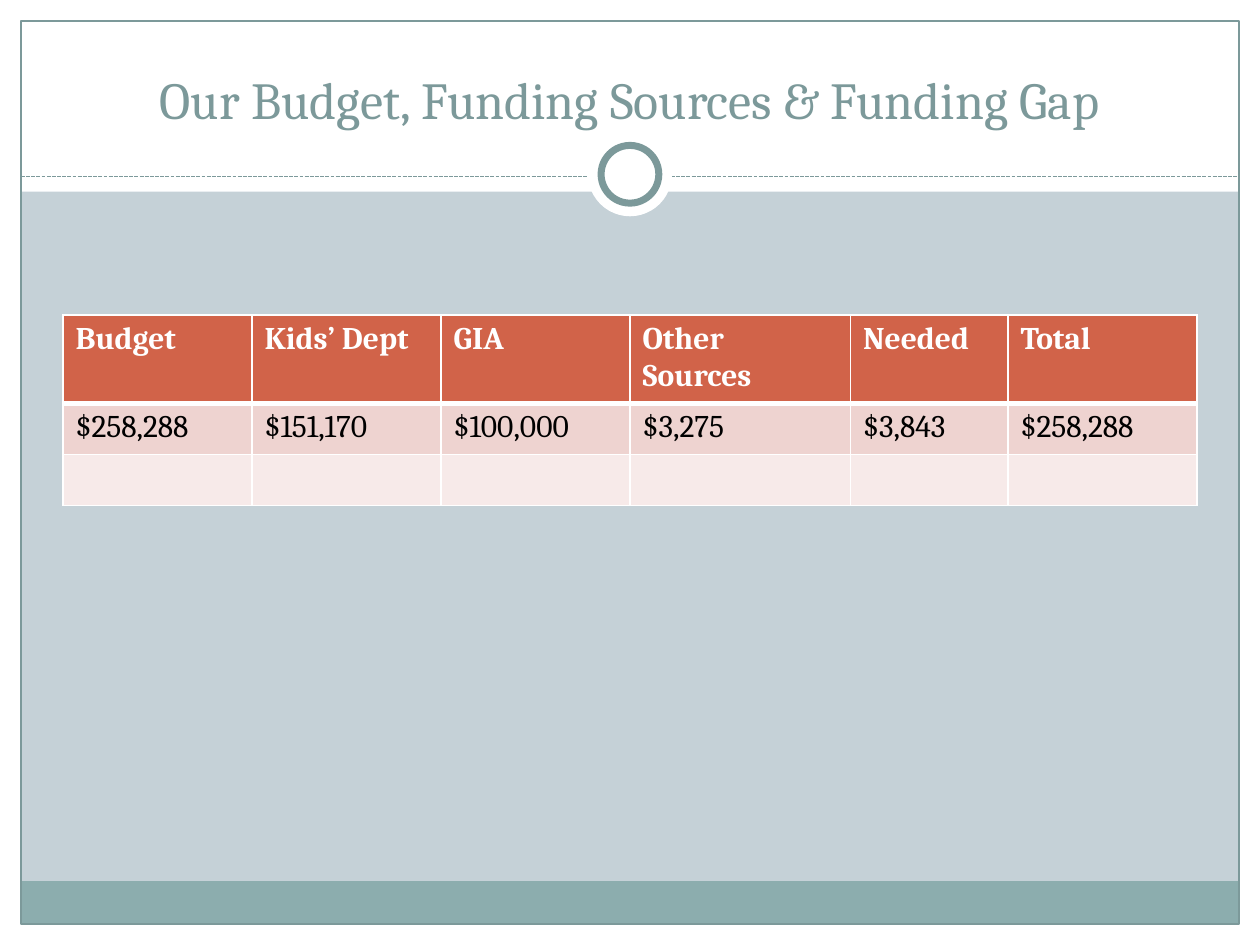
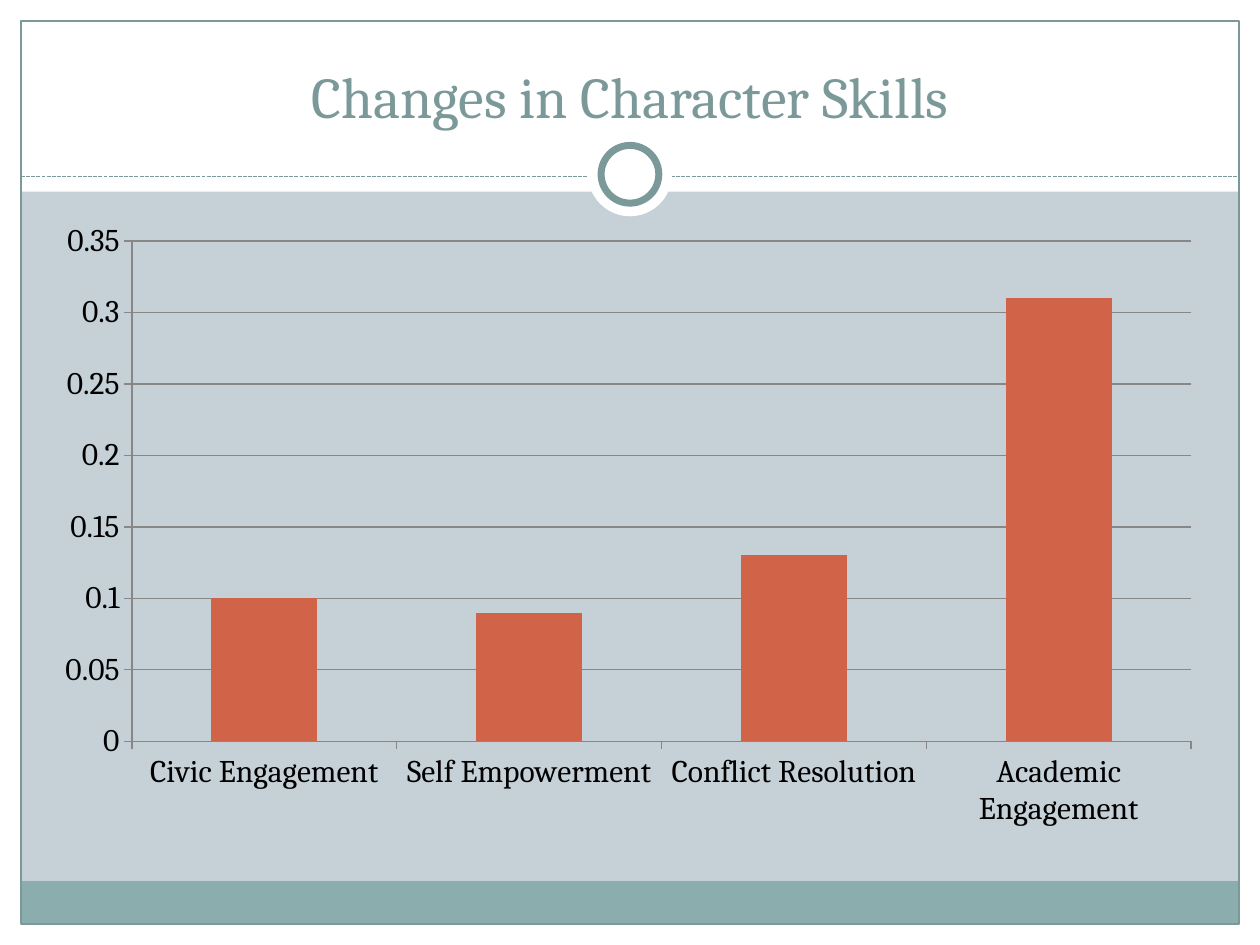
from dataclasses import dataclass

from lxml.etree import SubElement
from pptx import Presentation
from pptx.chart.data import CategoryChartData
from pptx.dml.color import RGBColor
from pptx.enum.chart import XL_CHART_TYPE as ChartType, XL_TICK_MARK as TickMark
from pptx.enum.dml import MSO_LINE_DASH_STYLE as Dash
from pptx.enum.shapes import MSO_CONNECTOR as Connector, MSO_SHAPE as Preset
from pptx.enum.text import MSO_ANCHOR as Anchor, PP_ALIGN as Align
from pptx.oxml.ns import qn
from pptx.slide import Slide
from pptx.table import _Cell as Cell
from pptx.text.text import TextFrame
from pptx.util import Pt


@dataclass(frozen=True)
class Theme:
    font: str = "Cambria"
    background: str = "C5D1D7"
    white: str = "FFFFFF"
    black: str = "000000"
    slate: str = "7C999A"
    teal: str = "8CADAE"
    coral: str = "D16349"
    row_tint: str = "EED3D0"
    row_light: str = "F7EAE9"
    grid: str = "878787"
    title_size: float = 33
    long_title_size: float = 29.7
    body_size: float = 18
    hairline: float = 0.75


@dataclass(frozen=True)
class Piece:
    """A decoration: place in points, optional fill and outline."""
    left: float
    top: float
    width: float
    height: float
    fill: str | None = None
    line: str | None = None
    weight: float = 0
    preset: Preset = Preset.RECTANGLE


THEME = Theme()
WIDTH, HEIGHT, MARGIN = 720, 540, 12
INNER_WIDTH = WIDTH - 2 * MARGIN
RULE_TOP, RING_CENTER = 100.8, 99.6


def circle(diameter: float, **look) -> Piece:
    """A circle centred on the divider ornament."""
    return Piece((WIDTH - diameter) / 2, RING_CENTER - diameter / 2,
                 diameter, diameter, preset=Preset.OVAL, **look)


BANDS = [
    Piece(0, HEIGHT - MARGIN, WIDTH, MARGIN, THEME.white),
    Piece(0, 0, WIDTH, 109.5, THEME.white),
    Piece(0, 0, MARGIN, HEIGHT, THEME.white),
    Piece(WIDTH - MARGIN, 0, MARGIN, HEIGHT, THEME.white),
    Piece(MARGIN, 503.5, INNER_WIDTH, 24.5, THEME.teal),
    Piece(MARGIN, MARGIN, INNER_WIDTH, HEIGHT - 2 * MARGIN,
          line=THEME.slate, weight=THEME.hairline),
]
RING = [
    circle(48, fill=THEME.white),
    circle(33, fill=THEME.white, line=THEME.slate, weight=4),
]


def rgb(color: str) -> RGBColor:
    return RGBColor.from_string(color)


def write(frame: TextFrame, text: str, *, size: float = THEME.body_size,
          color: str = THEME.black, bold: bool = False,
          align: Align = Align.LEFT) -> None:
    para = frame.paragraphs[0]
    para.alignment = align
    para.font.size = Pt(size)
    if not text:
        return
    span = para.add_run()
    span.text = text
    span.font.name = THEME.font
    span.font.size = Pt(size)
    span.font.bold = bold
    span.font.color.rgb = rgb(color)


def draw_piece(page: Slide, piece: Piece) -> None:
    shape = page.shapes.add_shape(piece.preset, Pt(piece.left), Pt(piece.top),
                                  Pt(piece.width), Pt(piece.height))
    shape.shadow.inherit = False
    if piece.fill:
        shape.fill.solid()
        shape.fill.fore_color.rgb = rgb(piece.fill)
    else:
        shape.fill.background()
    if piece.line:
        shape.line.color.rgb = rgb(piece.line)
        shape.line.width = Pt(piece.weight)
    else:
        shape.line.fill.background()


def draw_rule(page: Slide) -> None:
    rule = page.shapes.add_connector(Connector.STRAIGHT, Pt(MARGIN), Pt(RULE_TOP),
                                     Pt(WIDTH - MARGIN), Pt(RULE_TOP))
    rule.line.color.rgb = rgb(THEME.slate)
    rule.line.width = Pt(THEME.hairline)
    rule.line.dash_style = Dash.SQUARE_DOT
    SubElement(rule._element.spPr, qn("a:effectLst"))


def add_page(deck: Presentation, title: str, title_size: float) -> Slide:
    """A blank page with the shared bands, divider, ring and title."""
    page = deck.slides.add_slide(deck.slide_layouts[6])
    page.background.fill.solid()
    page.background.fill.fore_color.rgb = rgb(THEME.background)
    for band in BANDS:
        draw_piece(page, band)
    draw_rule(page)
    for piece in RING:
        draw_piece(page, piece)
    box = page.shapes.add_textbox(Pt(24), Pt(18), Pt(WIDTH - 48), Pt(60))
    box.text_frame.word_wrap = True
    box.text_frame.vertical_anchor = Anchor.BOTTOM
    write(box.text_frame, title, size=title_size, color=THEME.slate, align=Align.CENTER)
    return page


def border_cell(cell: Cell, *, top: float = 1, bottom: float = 1) -> None:
    """White borders; called before the fill, which must follow them."""
    properties = cell._tc.get_or_add_tcPr()
    for side, weight in {"L": 1, "R": 1, "T": top, "B": bottom}.items():
        line = SubElement(properties, qn(f"a:ln{side}"), w=str(Pt(weight)))
        SubElement(SubElement(line, qn("a:solidFill")), qn("a:srgbClr"), val=THEME.white)


def add_budget_table(page: Slide) -> None:
    amounts = {"Budget": "$258,288", "Kids’ Dept": "$151,170", "GIA": "$100,000",
               "Other Sources": "$3,275", "Needed": "$3,843", "Total": "$258,288"}
    rows = [list(amounts), list(amounts.values()), [""] * len(amounts)]
    fills = [THEME.coral, THEME.row_tint, THEME.row_light]
    row_heights = [48.6, 29.2, 29.2]
    column_widths = [108, 108, 108, 126, 90, 108]
    table = page.shapes.add_table(len(rows), len(amounts), Pt(36), Pt(180),
                                  Pt(sum(column_widths)), Pt(sum(row_heights))).table
    for column, width in zip(table.columns, column_widths):
        column.width = Pt(width)
    for index, (row, texts) in enumerate(zip(table.rows, rows)):
        row.height = Pt(row_heights[index])
        header = index == 0
        for cell, text in zip(row.cells, texts):
            border_cell(cell, top=3 if index == 1 else 1, bottom=3 if header else 1)
            cell.fill.solid()
            cell.fill.fore_color.rgb = rgb(fills[index])
            write(cell.text_frame, text, bold=header,
                  color=THEME.white if header else THEME.black)


def add_skills_chart(page: Slide) -> None:
    changes = {"Civic Engagement": 0.1, "Self Empowerment": 0.09,
               "Conflict Resolution": 0.13, "Academic Engagement": 0.31}
    data = CategoryChartData()
    data.categories = list(changes)
    data.add_series("Series 1", list(changes.values()))
    chart = page.shapes.add_chart(ChartType.COLUMN_CLUSTERED, Pt(24), Pt(120),
                                  Pt(670), Pt(360), data).chart
    chart.has_legend = False
    chart.has_title = False
    chart.font.name = THEME.font
    chart.font.size = Pt(THEME.body_size)
    chart.font.color.rgb = rgb(THEME.black)

    plot = chart.plots[0]
    plot.vary_by_categories = False
    plot.gap_width = 150
    bars = plot.series[0]
    bars.format.fill.solid()
    bars.format.fill.fore_color.rgb = rgb(THEME.coral)

    chart.value_axis.has_major_gridlines = True
    lines = [chart.value_axis.major_gridlines.format.line]
    for axis in (chart.category_axis, chart.value_axis):
        axis.major_tick_mark = TickMark.OUTSIDE
        axis.minor_tick_mark = TickMark.NONE
        lines.append(axis.format.line)
    for line in lines:
        line.color.rgb = rgb(THEME.grid)
        line.width = Pt(THEME.hairline)


def main() -> None:
    deck = Presentation()
    deck.slide_width, deck.slide_height = Pt(WIDTH), Pt(HEIGHT)

    # Budget
    add_budget_table(add_page(deck, "Our Budget, Funding Sources & Funding Gap",
                              THEME.long_title_size))
    # Character skills
    add_skills_chart(add_page(deck, "Changes in Character Skills", THEME.title_size))

    deck.save("out.pptx")


if __name__ == "__main__":
    main()
